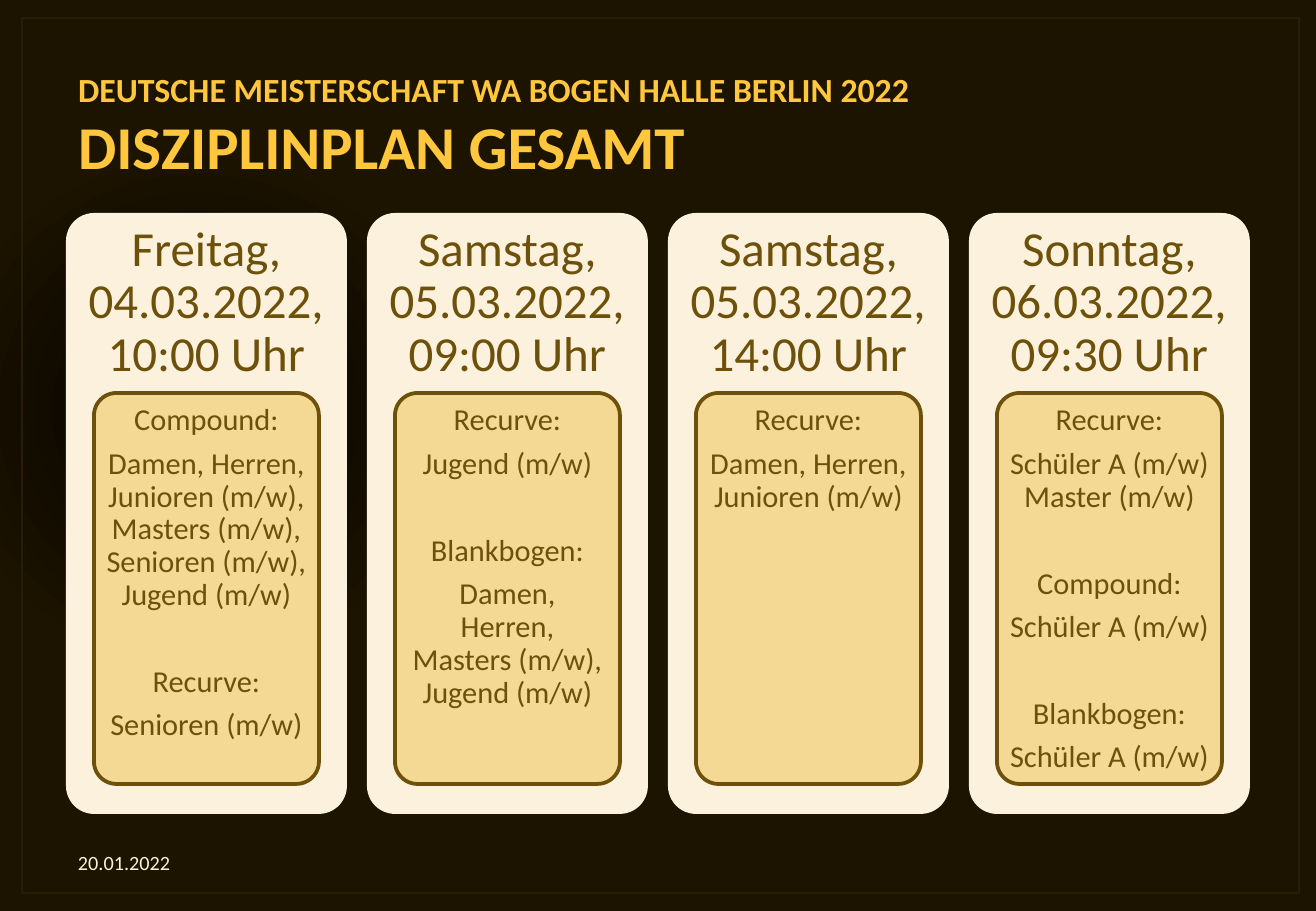
from dataclasses import dataclass

from lxml import etree
from pptx import Presentation
from pptx.dml.color import RGBColor
from pptx.enum.shapes import MSO_SHAPE as Preset
from pptx.enum.text import MSO_ANCHOR as Anchor, MSO_AUTO_SIZE as AutoSize, PP_ALIGN as Align
from pptx.oxml.ns import qn
from pptx.shapes.autoshape import Shape
from pptx.slide import Slide
from pptx.text.text import TextFrame
from pptx.util import Emu, Pt

EMU_PER_PX = 7526

BLACK = RGBColor(0x00, 0x00, 0x00)
NIGHT = RGBColor(0x1D, 0x14, 0x00)
FRAME = RGBColor(0x29, 0x1E, 0x04)
GOLD = RGBColor(0xFF, 0xC7, 0x3D)
CREAM = RGBColor(0xFB, 0xF1, 0xDC)
SAND = RGBColor(0xF4, 0xD9, 0x94)
BROWN = RGBColor(0x6D, 0x50, 0x0A)
PALE = RGBColor(0xFC, 0xF1, 0xD5)

CARD_LEFT, CARD_TOP, CARD_WIDTH, CARD_HEIGHT, CARD_PITCH = 66, 213, 281, 601, 301
HEADER_HEIGHT = 180
PANEL_INDENT, PANEL_TOP, PANEL_WIDTH, PANEL_HEIGHT = 28, 393, 225, 391


@dataclass(frozen=True)
class Discipline:
    bow: str
    classes: str


@dataclass(frozen=True)
class Session:
    start: str
    disciplines: tuple[Discipline, ...]


SESSIONS = (
    Session("Freitag, 04.03.2022, 10:00 Uhr", (
        Discipline("Compound:", "Damen, Herren, Junioren (m/w), Masters (m/w), Senioren (m/w), Jugend (m/w)"),
        Discipline("Recurve:", "Senioren (m/w)"),
    )),
    Session("Samstag, 05.03.2022, 09:00 Uhr", (
        Discipline("Recurve:", "Jugend (m/w)"),
        Discipline("Blankbogen:", "Damen,\vHerren,\vMasters (m/w), Jugend (m/w)"),
    )),
    Session("Samstag, 05.03.2022, 14:00 Uhr", (
        Discipline("Recurve:", "Damen, Herren, Junioren (m/w)"),
    )),
    Session("Sonntag, 06.03.2022, 09:30 Uhr", (
        Discipline("Recurve:", "Schüler A (m/w)\vMaster (m/w)"),
        Discipline("Compound:", "Schüler A (m/w)"),
        Discipline("Blankbogen:", "Schüler A (m/w)"),
    )),
)


def px(length: int) -> Emu:
    return Emu(length * EMU_PER_PX)


def apply_format(target: object, values: dict) -> None:
    for name, value in values.items():
        setattr(target, name, value)


def format_frame(frame: TextFrame, anchor: Anchor, side: int = 12, vertical: int = 6) -> None:
    apply_format(frame, {
        "word_wrap": True,
        "auto_size": AutoSize.NONE,
        "vertical_anchor": anchor,
        "margin_left": px(side),
        "margin_right": px(side),
        "margin_top": px(vertical),
        "margin_bottom": px(vertical),
    })


def add_span(para, text: str, size: int, color: RGBColor, bold: bool = False) -> None:
    for index, line in enumerate(text.split("\v")):
        if index:
            para.add_line_break()
        span = para.add_run()
        span.text = line
        apply_format(span.font, {"name": "Calibri", "size": Pt(size), "bold": bold})
        span.font.color.rgb = color


def add_centred(para, text: str, size: int, before: float = 0) -> None:
    apply_format(para, {
        "alignment": Align.CENTER,
        "line_spacing": 0.9,
        "space_before": Pt(before),
        "space_after": Pt(round(size * 0.35, 1)),
    })
    add_span(para, text, size, BROWN)


def add_box(slide: Slide, preset: Preset, bounds: tuple[int, int, int, int],
            fill: RGBColor | None, line: RGBColor | None, weight: float = 0) -> Shape:
    box = slide.shapes.add_shape(preset, *map(px, bounds))
    box.shadow.inherit = False
    if preset == Preset.ROUNDED_RECTANGLE:
        box.adjustments[0] = 0.1
    if fill is None:
        box.fill.background()
    else:
        box.fill.solid()
        box.fill.fore_color.rgb = fill
    if line is None:
        box.line.fill.background()
    else:
        box.line.color.rgb = line
        box.line.width = Pt(weight)
    return box


def paint_background(slide: Slide) -> None:
    fill = slide.background.fill
    fill.gradient()
    for stop, (position, color) in zip(fill.gradient_stops, ((0, BLACK), (0.34, NIGHT))):
        stop.position = position
        stop.color.rgb = color
    linear = slide.element.find(f".//{qn('a:lin')}")
    gradient = linear.getparent()
    gradient.remove(linear)
    circle = etree.SubElement(gradient, qn("a:path"), {"path": "circle"})
    etree.SubElement(circle, qn("a:fillToRect"), {"l": "15000", "t": "50000", "r": "85000", "b": "60000"})


def add_title(slide: Slide) -> None:
    title = slide.shapes.title
    apply_format(title, {"left": px(66), "top": px(36), "width": px(1185), "height": px(152)})
    format_frame(title.text_frame, Anchor.BOTTOM)
    para = title.text_frame.paragraphs[0]
    para.alignment = Align.LEFT
    add_span(para, "DEUTSCHE MEISTERSCHAFT WA BOGEN HALLE BERLIN 2022", 20, GOLD, True)
    para.add_line_break()
    add_span(para, "DISZIPLINPLAN GESAMT", 36, GOLD, True)


def add_session(slide: Slide, session: Session, left: int) -> None:
    add_box(slide, Preset.ROUNDED_RECTANGLE, (left, CARD_TOP, CARD_WIDTH, CARD_HEIGHT), CREAM, None)
    header = slide.shapes.add_textbox(*map(px, (left, CARD_TOP, CARD_WIDTH, HEADER_HEIGHT))).text_frame
    format_frame(header, Anchor.MIDDLE, 14, 14)
    add_centred(header.paragraphs[0], session.start, 29)
    panel = add_box(slide, Preset.ROUNDED_RECTANGLE,
                    (left + PANEL_INDENT, PANEL_TOP, PANEL_WIDTH, PANEL_HEIGHT), SAND, BROWN, 2.25)
    frame = panel.text_frame
    format_frame(frame, Anchor.TOP, 6, 5)
    for index, discipline in enumerate(session.disciplines):
        para = frame.add_paragraph() if index else frame.paragraphs[0]
        add_centred(para, discipline.bow, 18, 25.8 if index else 0)
        add_centred(frame.add_paragraph(), discipline.classes, 18)


def add_date(slide: Slide) -> None:
    frame = slide.shapes.add_textbox(*map(px, (66, 838, 307, 49))).text_frame
    format_frame(frame, Anchor.MIDDLE)
    add_span(frame.paragraphs[0], "20.01.2022", 12, PALE)


def main() -> None:
    deck = Presentation()
    apply_format(deck, {"slide_width": px(1316), "slide_height": px(911)})
    slide = deck.slides.add_slide(deck.slide_layouts[5])
    paint_background(slide)
    add_box(slide, Preset.RECTANGLE, (22, 18, 1277, 875), None, FRAME, 1.5)
    add_title(slide)
    for index, session in enumerate(SESSIONS):
        add_session(slide, session, CARD_LEFT + index * CARD_PITCH)
    add_date(slide)
    deck.save("out.pptx")


if __name__ == "__main__":
    main()
